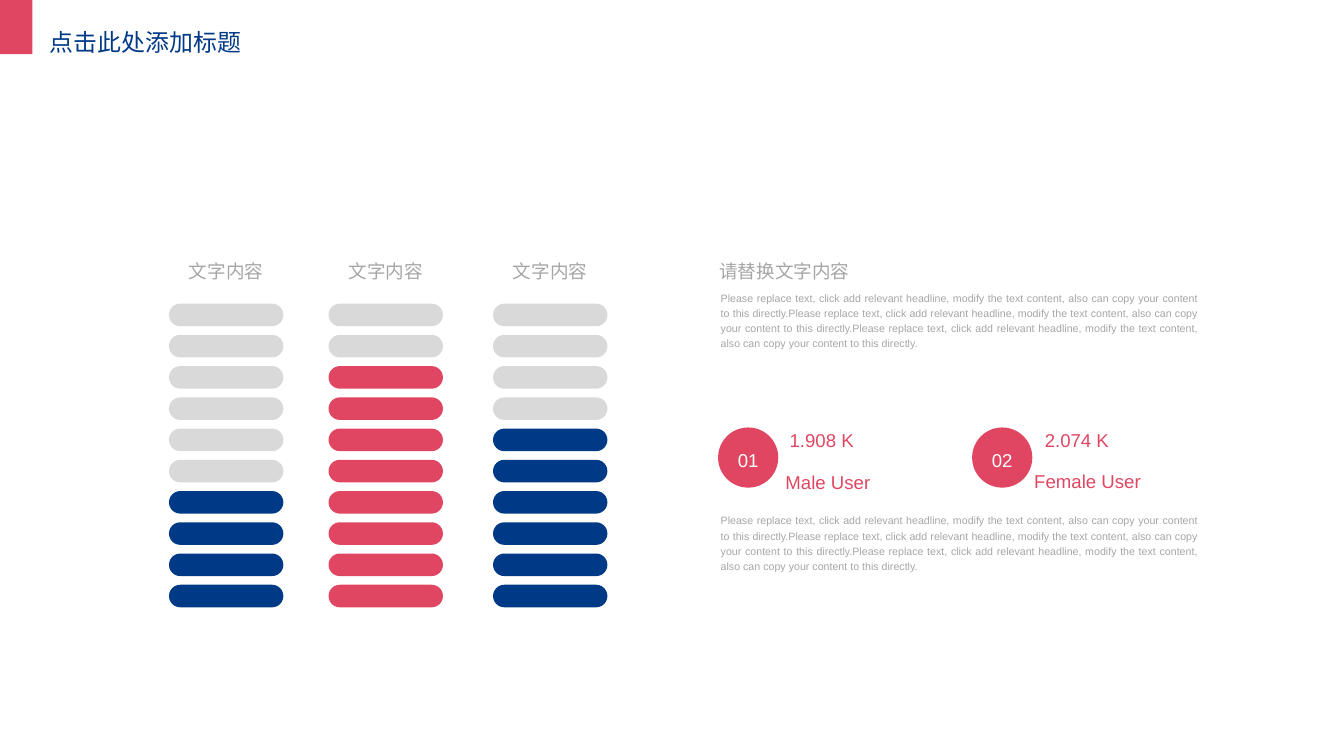
import pptx
import pptx.dml.color
import pptx.enum.shapes
import pptx.enum.text
import pptx.oxml.ns
import pptx.util
from lxml import etree

Cm = pptx.util.Cm
Pt = pptx.util.Pt
SHAPE = pptx.enum.shapes.MSO_SHAPE
ALIGN = pptx.enum.text.PP_ALIGN
ANCHOR = pptx.enum.text.MSO_ANCHOR
AUTO_SIZE = pptx.enum.text.MSO_AUTO_SIZE

# Content
RED, BLUE, LIGHT, GREY, WHITE = "E04661", "003A87", "D9D9D9", "A6A6A6", "FFFFFF"
TITLE = "点击此处添加标题"
HEADING = "请替换文字内容"
SENTENCE = ("Please replace text, click add relevant headline, modify the text content, "
            "also can copy your content to this directly.")
BODY = SENTENCE * 3
BODY_TOPS = (7.68, 13.6)

# Label, left edge in cm, filled pills, colour
COLUMNS = [
    ("文字内容", 4.49, 4, BLUE),
    ("文字内容", 8.73, 8, RED),
    ("文字内容", 13.1, 6, BLUE),
]

# Number, circle left, then (text, left, top, width) of each line, in cm
USERS = [
    ("01", 19.08, [("1.908 K", 20.98, 11.29, 1.9), ("Male User", 20.87, 12.4, 2.5)]),
    ("02", 25.83, [("2.074 K", 27.76, 11.29, 1.9), ("Female User", 27.48, 12.37, 3.1)]),
]

# Pill grid in cm
PILL_ROWS = 10
PILL_WIDTH, PILL_HEIGHT = 3.04, 0.6
PILL_TOP, PILL_PITCH = 8.07, 0.83
LABEL_TOP = 6.91
CIRCLE_TOP, CIRCLE_SIZE = 11.36, 1.6
TEXT_LEFT = 19.15

presentation = pptx.Presentation()
presentation.slide_width = Cm(35.71)
presentation.slide_height = Cm(20.09)
slide = presentation.slides.add_slide(presentation.slide_layouts[5])


def colour(value):
    return pptx.dml.color.RGBColor.from_string(value)


def write(text_frame, text, size, text_colour, align, spacing=1.2, font="Arial"):
    text_frame.text = text
    paragraph = text_frame.paragraphs[0]
    paragraph.alignment = align
    paragraph.line_spacing = spacing
    run = paragraph.runs[0]
    run.font.size = Pt(size)
    run.font.name = font
    run.font.color.rgb = colour(text_colour)
    return run


def remove_margins(text_frame):
    text_frame.margin_left = text_frame.margin_right = 0
    text_frame.margin_top = text_frame.margin_bottom = 0


def add_shape(kind, left, top, width, height, fill):
    shape = slide.shapes.add_shape(kind, Cm(left), Cm(top), Cm(width), Cm(height))
    shape.shadow.inherit = False
    shape.fill.solid()
    shape.fill.fore_color.rgb = colour(fill)
    shape.line.fill.background()
    return shape


def add_text(text, left, top, width, height, size, text_colour, align, spacing=1.2):
    box = slide.shapes.add_textbox(Cm(left), Cm(top), Cm(width), Cm(height))
    text_frame = box.text_frame
    remove_margins(text_frame)
    text_frame.word_wrap = True
    text_frame.auto_size = AUTO_SIZE.SHAPE_TO_FIT_TEXT
    write(text_frame, text, size, text_colour, align, spacing)


# Title and corner block
add_shape(SHAPE.RECTANGLE, 0, 0, 0.86, 1.44, RED)
title = slide.shapes.title
title.left, title.top, title.width, title.height = Cm(1.07), Cm(0.6), Cm(6), Cm(1)
title.text_frame.auto_size = AUTO_SIZE.NONE
title.text_frame.vertical_anchor = ANCHOR.TOP
title_font = "Noto Sans CJK SC"
title_run = write(title.text_frame, TITLE, 18, BLUE, ALIGN.LEFT, 1.0, title_font)
east_asian = etree.SubElement(title_run.font._element, pptx.oxml.ns.qn("a:ea"))
east_asian.set("typeface", title_font)

# Pill columns, filled from the bottom
for label, left, filled, fill in COLUMNS:
    add_text(label, left, LABEL_TOP, PILL_WIDTH, 0.61, 14, GREY, ALIGN.CENTER, 1.0)
    for row in range(PILL_ROWS):
        pill_fill = fill if row >= PILL_ROWS - filled else LIGHT
        pill = add_shape(SHAPE.ROUNDED_RECTANGLE, left, PILL_TOP + row * PILL_PITCH,
                         PILL_WIDTH, PILL_HEIGHT, pill_fill)
        pill.adjustments[0] = 0.5

# Heading and body text
add_text(HEADING, 19.11, 6.78, 11.38, 0.66, 14, GREY, ALIGN.JUSTIFY)
for top in BODY_TOPS:
    add_text(BODY, TEXT_LEFT, top, 12.7, 1.65, 8, GREY, ALIGN.JUSTIFY)

# User figures
for number, circle_left, lines in USERS:
    circle = add_shape(SHAPE.OVAL, circle_left, CIRCLE_TOP, CIRCLE_SIZE, CIRCLE_SIZE, RED)
    remove_margins(circle.text_frame)
    circle.text_frame.vertical_anchor = ANCHOR.MIDDLE
    write(circle.text_frame, number, 14, WHITE, ALIGN.CENTER)
    for text, left, top, width in lines:
        add_text(text, left, top, width, 0.66, 14, RED, ALIGN.JUSTIFY)

presentation.save("out.pptx")
